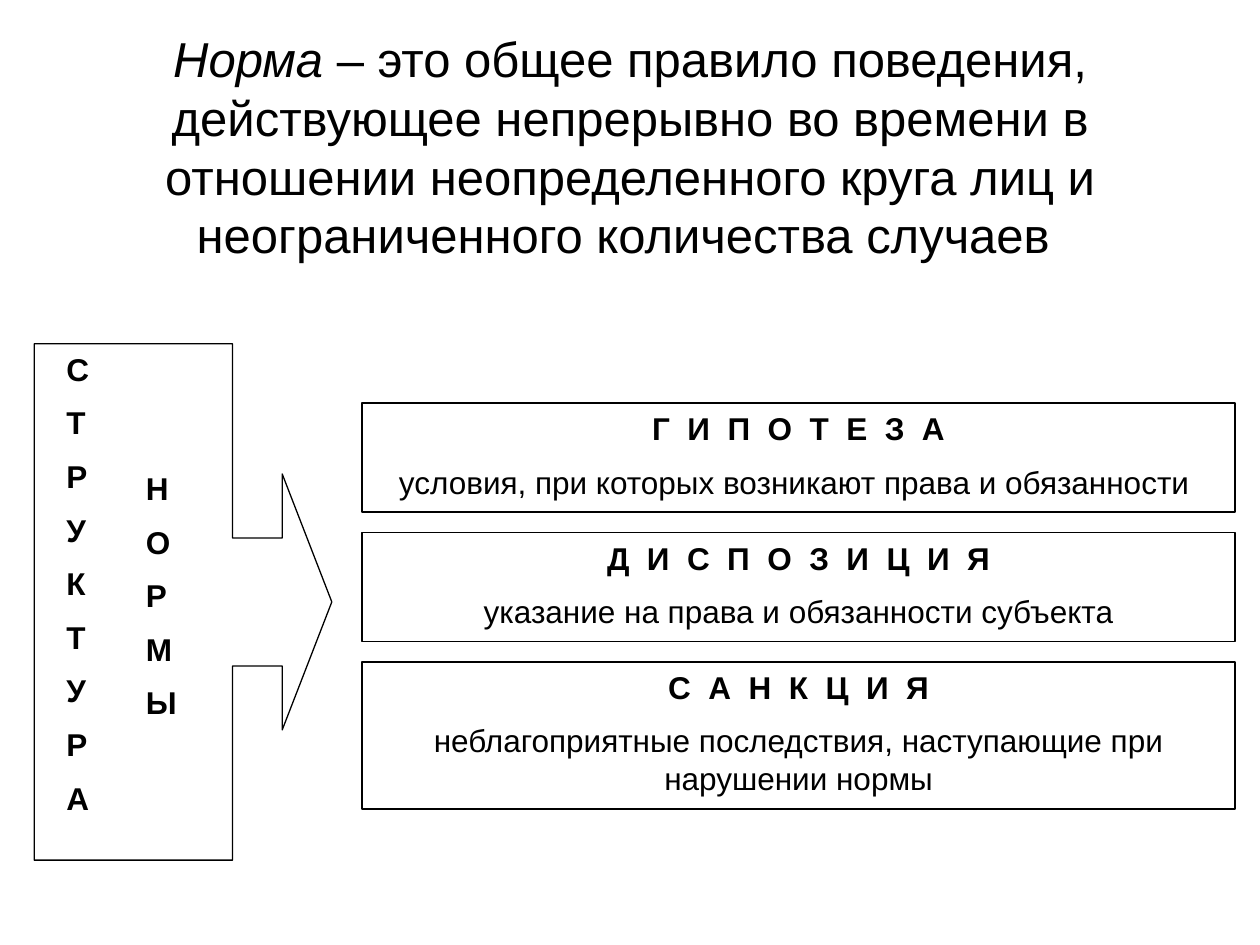
from collections import namedtuple
from dataclasses import dataclass

from pptx import Presentation
from pptx.dml.color import RGBColor
from pptx.enum.shapes import MSO_SHAPE
from pptx.enum.text import MSO_ANCHOR, PP_ALIGN
from pptx.util import Cm, Pt

RECTANGLE = MSO_SHAPE.RECTANGLE
ARROW_CALLOUT = MSO_SHAPE.RIGHT_ARROW_CALLOUT
TOP, MIDDLE = MSO_ANCHOR.TOP, MSO_ANCHOR.MIDDLE
LEFT, CENTER = PP_ALIGN.LEFT, PP_ALIGN.CENTER


@dataclass(frozen=True)
class Theme:
    font: str = "Arial"
    ink: RGBColor = RGBColor(0, 0, 0)
    title_size: Pt = Pt(28)
    body_size: Pt = Pt(18)
    para_gap: Pt = Pt(9)
    box_line: Pt = Pt(1)
    arrow_line: Pt = Pt(0.75)


THEME = Theme()
Area = namedtuple("Area", "left top width height")

TERM = "Норма"
DEFINITION = (" – это общее правило поведения, действующее непрерывно во времени в "
              "отношении неопределенного круга лиц и неограниченного количества случаев ")
# Heading, explanation, box height in cm
ELEMENTS = [
    ("ГИПОТЕЗА", "условия, при которых возникают права и обязанности ", 2.2),
    ("ДИСПОЗИЦИЯ", "указание на права и обязанности субъекта", 2.2),
    ("САНКЦИЯ", "неблагоприятные последствия, наступающие при нарушении нормы", 2.97),
]


def style_run(span, size, bold=False, italic=False):
    font = span.font
    font.name, font.size, font.color.rgb = THEME.font, size, THEME.ink
    font.bold, font.italic = bold, italic


def write_lines(box, lines, alignment):
    """Fill the box with one paragraph for each (text, bold) pair."""
    frame = box.text_frame
    frame.word_wrap = True
    frame.vertical_anchor = TOP
    frame.text = "\n".join(text for text, _ in lines)
    for index, (para, (_, bold)) in enumerate(zip(frame.paragraphs, lines)):
        para.alignment = alignment
        para.space_before = THEME.para_gap if index else Pt(0)
        style_run(para.runs[0], THEME.body_size, bold)


def add_outline(page, preset, area, line_width):
    shape = page.shapes.add_shape(preset, *map(Cm, area))
    shape.shadow.inherit = False
    shape.fill.background()
    shape.line.color.rgb = THEME.ink
    shape.line.width = line_width
    return shape


def add_definition(page, area):
    frame = page.shapes.add_textbox(*map(Cm, area)).text_frame
    frame.word_wrap = True
    frame.vertical_anchor = MIDDLE
    para = frame.paragraphs[0]
    para.alignment = CENTER
    for text, italic in ((TERM, True), (DEFINITION, False)):
        span = para.add_run()
        span.text = text
        style_run(span, THEME.title_size, italic=italic)


def add_elements(page, area):
    """Stack the three parts of the norm, with equal gaps, in the area."""
    used = sum(height for _, _, height in ELEMENTS)
    gap = (area.height - used) / (len(ELEMENTS) - 1)
    top = area.top
    for heading, explanation, height in ELEMENTS:
        box = add_outline(page, RECTANGLE, Area(area.left, top, area.width, height),
                          THEME.box_line)
        write_lines(box, [("  ".join(heading), True), (explanation, False)], CENTER)
        top += height + gap


def add_letter_column(page, word, area):
    box = page.shapes.add_textbox(*map(Cm, area))
    write_lines(box, [(letter, True) for letter in word], LEFT)


def add_structure_arrow(page, area):
    arrow = add_outline(page, ARROW_CALLOUT, area, THEME.arrow_line)
    for index, ratio in enumerate((0.43, 0.43, 1 / 6, 2 / 3)):
        arrow.adjustments[index] = ratio
    add_letter_column(page, "СТРУКТУРА", Area(area.left + 0.4, area.top, 1.4, 10.2))
    add_letter_column(page, "НОРМЫ", Area(area.left + 2.0, area.top + 2.4, 1.4, 5.6))


def main():
    deck = Presentation()
    deck.slide_width, deck.slide_height = Cm(25.4), Cm(19.05)
    page = deck.slides.add_slide(deck.slide_layouts[6])
    add_definition(page, Area(1.27, 0.76, 22.86, 4.37))
    add_elements(page, Area(7.3, 8.13, 17.6, 8.18))
    add_structure_arrow(page, Area(0.69, 6.93, 6.0, 10.41))
    deck.save("out.pptx")


if __name__ == "__main__":
    main()
